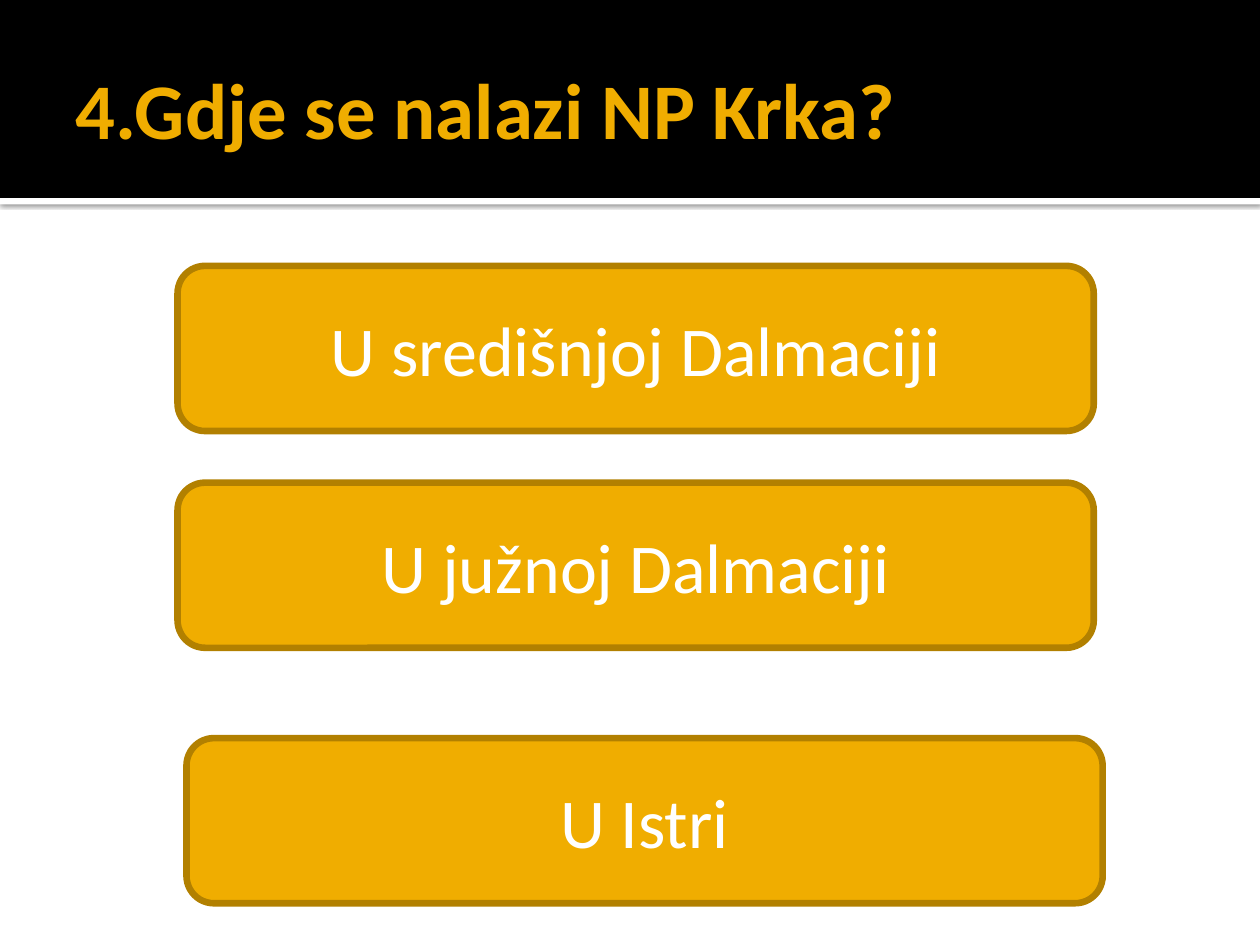
from lxml.etree import SubElement
from pptx import Presentation
from pptx.dml.color import RGBColor
from pptx.enum.shapes import MSO_SHAPE
from pptx.enum.text import MSO_ANCHOR, PP_ALIGN
from pptx.oxml.ns import qn
from pptx.util import Cm, Pt

COLORS = {"band": "000000", "rule": "FFFFFF", "accent": "F0AD00",
          "edge": "B28000", "answer": "FFFFFF", "shadow": "000000"}
WIDTH, HEIGHT = 25.4, 19.05
BAND_H, RULE_H = 3.99, 0.13
ANSWER_W, ANSWER_H = 18.47, 3.33
ANSWERS = [("U središnjoj Dalmaciji", 3.58, 5.36),
           ("U južnoj Dalmaciji", 3.58, 9.73),
           ("U Istri", 3.76, 14.88)]


def color(name):
    return RGBColor.from_string(COLORS[name])


def add_box(s, kind, box, fill):
    sp = s.shapes.add_shape(kind, *map(Cm, box))
    sp.shadow.inherit = False
    sp.fill.solid()
    sp.fill.fore_color.rgb = color(fill)
    sp.line.fill.background()
    return sp


def write(sp, text, align, size, name, bold=False):
    tf = sp.text_frame
    tf.word_wrap = True
    tf.vertical_anchor = MSO_ANCHOR.MIDDLE
    p = tf.paragraphs[0]
    p.alignment = align
    r = p.add_run()
    r.text = text
    for key, value in {"name": "Calibri", "size": Pt(size), "bold": bold}.items():
        setattr(r.font, key, value)
    r.font.color.rgb = color(name)


def add_shadow(sp):
    effects = sp._element.spPr.find(qn("a:effectLst"))
    shadow = SubElement(effects, qn("a:outerShdw"), blurRad=str(Pt(2.5)),
                        dist=str(Pt(0.8)), dir="5400000", algn="tl", rotWithShape="0")
    tone = SubElement(shadow, qn("a:srgbClr"), val=COLORS["shadow"])
    SubElement(tone, qn("a:alpha"), val="60000")


def add_header(s, box, text):
    x, y, w, h = box
    # White rule with its shadow, under the black band
    add_shadow(add_box(s, MSO_SHAPE.RECTANGLE, (x, y + h, w, RULE_H), "rule"))
    add_box(s, MSO_SHAPE.RECTANGLE, box, "band")
    # Title, brought in front of the band
    title = s.shapes.title
    s.shapes._spTree.append(title._element)
    place = {"left": x + 1.27, "top": y + 0.43, "width": w - 2.54, "height": h - 0.51}
    for key, value in place.items():
        setattr(title, key, Cm(value))
    margins = {"margin_left": 0.25, "margin_right": 0.13,
               "margin_top": 0.13, "margin_bottom": 0.13}
    for key, value in margins.items():
        setattr(title.text_frame, key, Cm(value))
    write(title, text, PP_ALIGN.LEFT, 45, "accent", bold=True)


def add_answer(s, box, text):
    sp = add_box(s, MSO_SHAPE.ROUNDED_RECTANGLE, box, "accent")
    sp.line.color.rgb = color("edge")
    sp.line.width = Pt(3.78)
    write(sp, text, PP_ALIGN.CENTER, 40, "answer")


def main():
    prs = Presentation()
    prs.slide_width, prs.slide_height = Cm(WIDTH), Cm(HEIGHT)
    s = prs.slides.add_slide(prs.slide_layouts[5])
    # Question
    add_header(s, (0, 0, WIDTH, BAND_H), "4.Gdje se nalazi NP Krka?")
    # Possible answers
    for text, x, y in ANSWERS:
        add_answer(s, (x, y, ANSWER_W, ANSWER_H), text)
    prs.save("out.pptx")


if __name__ == "__main__":
    main()
